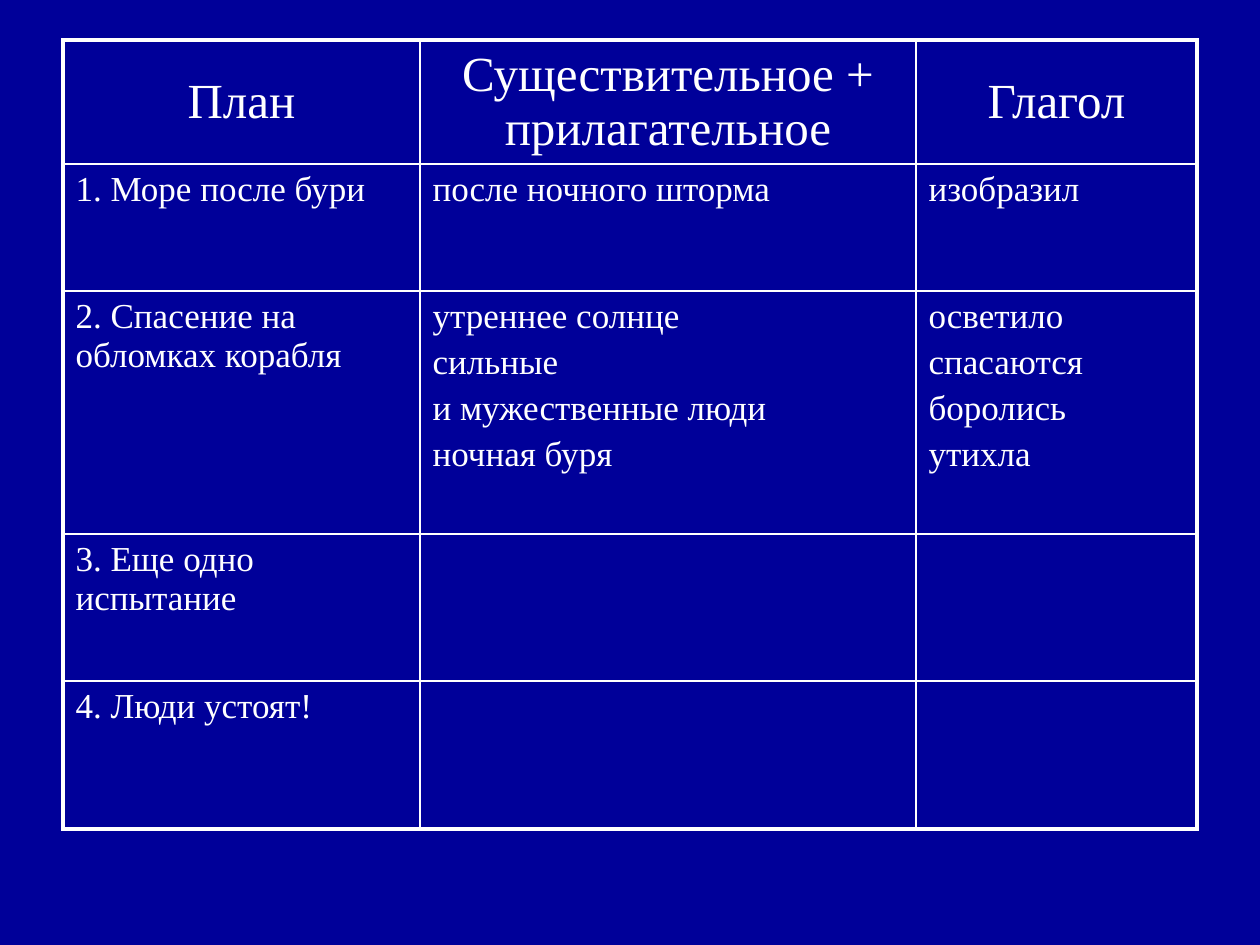
"""Build a slide with a four-point essay plan and its word bank."""
from lxml import etree
from pptx import Presentation
from pptx import util as u
from pptx.dml.color import RGBColor
from pptx.enum import text
from pptx.oxml import ns

NAVY = RGBColor(0x00, 0x00, 0x99)
WHITE = RGBColor(0xFF, 0xFF, 0xFF)
OUTER, INNER = 2.25, 1
COLUMNS = [357, 496, 281]
ROWS = [124, 127, 243, 147, 148]
PLAN = [
    ["План", "Существительное + прилагательное", "Глагол"],
    ["1. Море после бури", "после ночного шторма", "изобразил"],
    ["2. Спасение на обломках корабля",
     "утреннее солнце\nсильные\nи мужественные люди\nночная буря",
     "осветило\nспасаются\nборолись\nутихла"],
    ["3. Еще одно испытание", "", ""],
    ["4. Люди устоят!", "", ""],
]


def px(length):
    return u.Emu(round(length * 914400 / 126))


def add_border(cell, side, width):
    line = etree.SubElement(cell._tc.get_or_add_tcPr(), ns.qn(f"a:ln{side}"),
                            w=str(u.Pt(width)), cmpd="sng")
    fill = etree.SubElement(line, ns.qn("a:solidFill"))
    etree.SubElement(fill, ns.qn("a:srgbClr"), val=str(WHITE))
    etree.SubElement(line, ns.qn("a:prstDash"), val="solid")


deck = Presentation()
deck.slide_width, deck.slide_height = px(1260), px(945)
slide = deck.slides.add_slide(deck.slide_layouts[6])
slide.background.fill.solid()
slide.background.fill.fore_color.rgb = NAVY

plan = slide.shapes.add_table(len(ROWS), len(COLUMNS), px(63), px(40),
                              px(sum(COLUMNS)), px(sum(ROWS))).table
plan.first_row = plan.horz_banding = False
for column, width in zip(plan.columns, COLUMNS):
    column.width = px(width)
for row, height in zip(plan.rows, ROWS):
    row.height = px(height)

for r, entries in enumerate(PLAN):
    heading = r == 0
    size = 28 if heading else 20
    for c, entry in enumerate(entries):
        cell = plan.cell(r, c)
        cell.text = entry
        edges = {"L": c == 0, "R": c == len(COLUMNS) - 1,
                 "T": heading, "B": r == len(ROWS) - 1}
        for side, outside in edges.items():
            add_border(cell, side, OUTER if outside else INNER)
        cell.fill.background()
        cell.vertical_anchor = text.MSO_ANCHOR.MIDDLE if heading else text.MSO_ANCHOR.TOP
        for i, paragraph in enumerate(cell.text_frame.paragraphs):
            paragraph.alignment = text.PP_ALIGN.CENTER if heading else text.PP_ALIGN.LEFT
            if i:
                paragraph.space_before = u.Pt(size * 0.2)
            style = {"name": "Times New Roman", "size": u.Pt(size), "bold": False}
            for key, value in style.items():
                setattr(paragraph.font, key, value)
            paragraph.font.color.rgb = WHITE
            for run in paragraph.runs:
                for key, value in style.items():
                    setattr(run.font, key, value)
                run.font.color.rgb = WHITE

deck.save("out.pptx")
